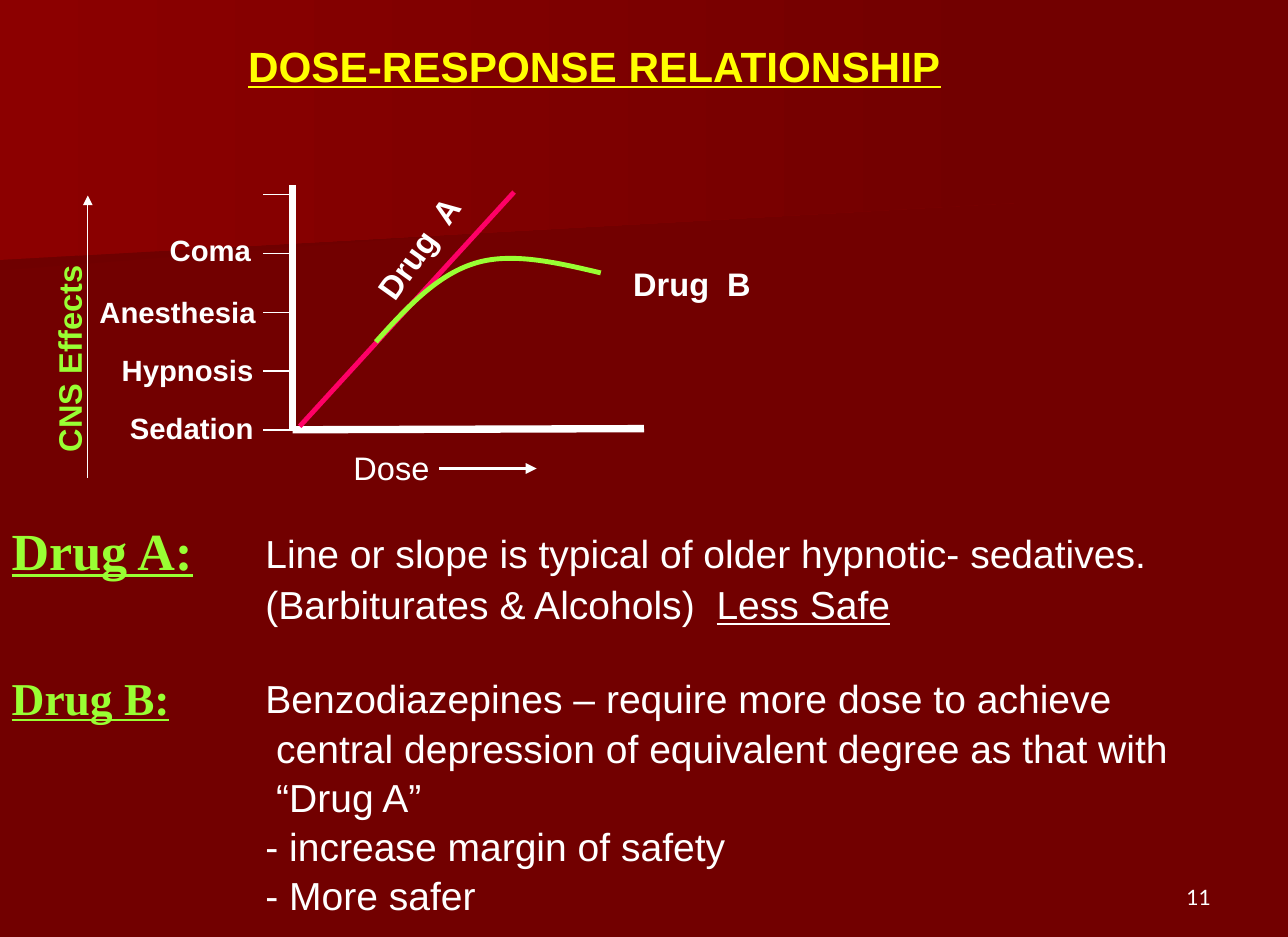
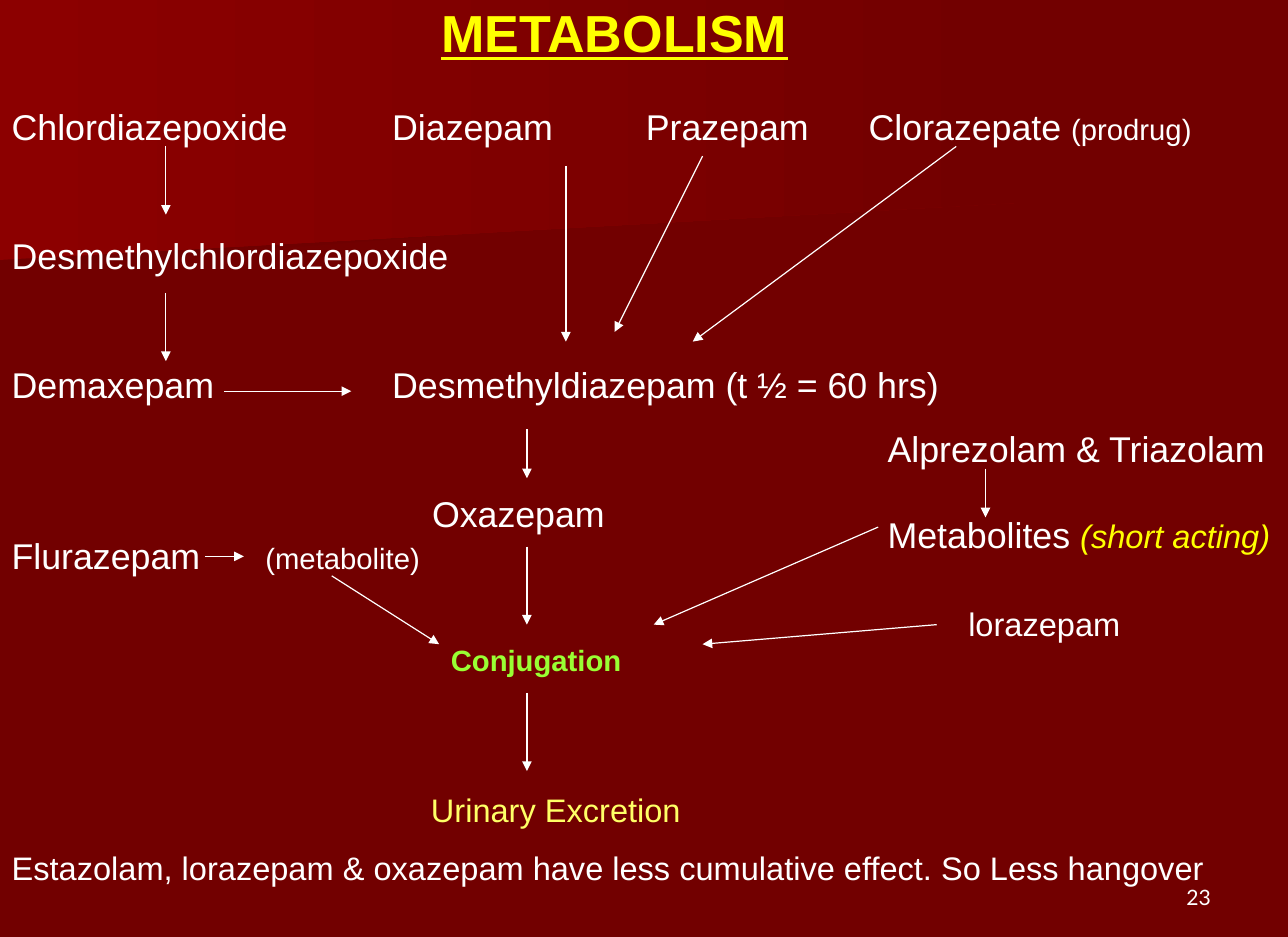
from dataclasses import dataclass

from lxml import etree
from pptx import Presentation
from pptx.dml.color import RGBColor
from pptx.enum import shapes, text
from pptx.oxml import ns
from pptx.util import Pt


@dataclass(frozen=True)
class Theme:
    # Colours
    ground: str = "720000"
    glow: str = "8C0000"
    shade: str = "6F0000"
    white: str = "FFFFFF"
    gold: str = "FFFF00"
    pale: str = "FFFF66"
    lime: str = "99FF33"
    pink: str = "FF0066"
    # Type
    sans: str = "Arial"
    serif: str = "Times New Roman"
    digit: str = "Lato"
    tiny: float = 13
    small: float = 18
    mid: float = 20
    body: float = 22
    large: float = 24
    # Lines
    thin: float = 0.75
    bold: float = 4.5


T = Theme()
RISE = {T.sans: 0.905, T.serif: 0.891, T.digit: 0.987}  # ascent per point


class Deck:
    def __init__(self):
        self.file = Presentation()
        self.file.slide_width, self.file.slide_height = Pt(792), Pt(576)

    def page(self, number):
        """Start a slide with ground, bands and number."""
        self.slide = self.file.slides.add_slide(self.file.slide_layouts[6])
        back = self.slide.background.fill
        back.solid()
        back.fore_color.rgb = RGBColor.from_string(T.ground)
        self.band([(0, 77.8), (617, 77.8), (616.3, 117.4), (0, 166.3)], T.shade)
        self.band([(0, 0), (627.1, 0), (627.1, 124.6), (0, 159.8)], T.glow)
        self.text(644.5, 556.6, 100, number, T.tiny, font=T.digit,
                  align=text.PP_ALIGN.RIGHT)

    def form(self, spots, close):
        spots = [(Pt(x), Pt(y)) for x, y in spots]
        pen = self.slide.shapes.build_freeform(*spots[0])
        pen.add_line_segments(spots[1:], close=close)
        shape = pen.convert_to_shape()
        shape.shadow.inherit = False
        return shape

    def band(self, spots, color):
        shape = self.form(spots, True)
        shape.line.fill.background()
        shape.fill.gradient()
        shape.fill.gradient_angle = 0
        for stop, tint in zip(shape.fill.gradient_stops, (color, T.ground)):
            stop.color.rgb = RGBColor.from_string(tint)

    def curve(self, spots, color, width):
        """Draw cubic curves: a start, then three points for each."""
        shape = self.form(spots, False)
        shape.fill.background()
        self.ink(shape, color, width)
        legs = shape._element.findall(".//" + ns.qn("a:lnTo"))
        for i in range(0, len(legs), 3):
            bend = etree.Element(ns.qn("a:cubicBezTo"))
            legs[i].addprevious(bend)
            for leg in legs[i:i + 3]:
                bend.append(leg[0])
                leg.getparent().remove(leg)

    def ink(self, shape, color, width):
        shape.line.color.rgb = RGBColor.from_string(color)
        shape.line.width = Pt(width)

    def line(self, x1, y1, x2, y2, color=T.white, width=T.thin, arrow=False):
        rule = self.slide.shapes.add_connector(
            shapes.MSO_CONNECTOR.STRAIGHT, Pt(x1), Pt(y1), Pt(x2), Pt(y2))
        self.ink(rule, color, width)
        props = rule._element.spPr
        if arrow:
            edge = props.find(ns.qn("a:ln"))
            etree.SubElement(edge, ns.qn("a:tailEnd"), type="triangle")
        etree.SubElement(props, ns.qn("a:effectLst"))

    def arrow(self, x1, y1, x2, y2, width=T.thin):
        self.line(x1, y1, x2, y2, width=width, arrow=True)

    def style(self, run, size, color=T.white, font=T.sans, bold=False,
              under=False, slant=False):
        face = run.font
        face.name, face.size = font, Pt(size)
        face.bold, face.underline, face.italic = bold, under, slant
        face.color.rgb = RGBColor.from_string(color)

    def text(self, x, base, width, words, size, gap=0, turn=0,
             align=text.PP_ALIGN.LEFT, font=T.sans, **look):
        """Place text by its left edge and the baseline of its first line."""
        rows = words.count("\n") + 1
        box = self.slide.shapes.add_textbox(
            Pt(x), Pt(base - RISE[font] * size), Pt(width),
            Pt(rows * (1.15 * size + gap)))
        box.rotation = turn
        frame = box.text_frame
        frame.margin_left = frame.margin_right = 0
        frame.margin_top = frame.margin_bottom = 0
        frame.word_wrap = True
        frame.text = words
        for para in frame.paragraphs:
            para.alignment = align
            para.space_after = Pt(gap)
            for run in para.runs:
                self.style(run, size, font=font, **look)
        return frame.paragraphs

    def more(self, para, words, size, **look):
        """Add a run in another style."""
        run = para.add_run()
        run.text = words
        self.style(run, size, **look)

    def title(self, x, base, words, size):
        self.text(x, base, 460, words, size, color=T.gold, bold=True, under=True)


def dose(deck):
    deck.page("11")
    deck.title(152.6, 48, "DOSE-RESPONSE RELATIONSHIP", 26)

    # Axes and ticks
    deck.line(180, 113.8, 180, 264.2, width=T.bold)
    deck.line(396, 263.5, 180, 264.2, width=T.bold)
    for i in range(5):
        y = 119.5 + 36.2 * i
        deck.line(181.4, y, 162, y)
    for x, base, name in ((104.4, 158.9, "Coma"), (61.2, 197.1, "Anesthesia"),
                          (74.9, 233.1, "Hypnosis"), (79.9, 268.4, "Sedation")):
        deck.text(x, base, 100, name, T.small, bold=True)
    deck.arrow(54, 293.8, 54, 120.2)
    deck.text(-18.2, 227.3, 120, "CNS Effects", T.mid, turn=270,
              align=text.PP_ALIGN.CENTER, color=T.lime, bold=True)
    deck.text(217.4, 293.3, 50, "Dose", T.mid)
    deck.arrow(270, 288, 330, 288, 2.25)

    # Response of each drug
    deck.line(184.3, 262.1, 316.1, 118.1, T.pink, 3)
    deck.curve([(231.1, 210.2), (249.8, 189.4), (268.6, 169.2), (291.6, 162),
                (313.9, 154.8), (342, 161.3), (369.4, 167.8)], T.lime, 3)
    deck.text(206.7, 158.7, 100, "Drug  A", T.mid, turn=305.4,
              align=text.PP_ALIGN.CENTER, bold=True)
    deck.text(389.4, 180.3, 100, "Drug  B", T.mid, bold=True)

    # Notes
    for base, name, size in ((347, "Drug A:", 32), (436.6, "Drug B:", 28)):
        deck.text(7.2, base, 150, name, size, font=T.serif, color=T.lime,
                  bold=True, under=True)
    older = deck.text(
        163.2, 347, 620,
        "Line or slope is typical of older hypnotic- sedatives.\n"
        "(Barbiturates & Alcohols)  ", T.large, gap=2.9)
    deck.more(older[1], "Less Safe", T.large, under=True)
    newer = deck.text(
        163.2, 436.6, 620,
        "Benzodiazepines – require more dose to achieve\n"
        "central depression of equivalent degree as that with\n"
        "“Drug A”\n"
        "- increase margin of safety\n"
        "- More safer", T.large, gap=1.45)
    for para in newer[1:3]:
        para._p.get_or_add_pPr().set("marL", str(Pt(6.7)))


def fate(deck):
    deck.page("23")
    deck.title(271.4, 29.4, "METABOLISM", 32)

    # Drugs on a grid of tab stops and text rows
    for tab, row, width, name in (
            (0, 0, 200, "Chlordiazepoxide"), (3, 0, 130, "Diazepam"),
            (5, 0, 120, "Prazepam"), (0, 3, 300, "Desmethylchlordiazepoxide"),
            (0, 6, 150, "Demaxepam"),
            (3, 6, 380, "Desmethyldiazepam (t ½ = 60 hrs)"),
            (0, 10, 130, "Flurazepam")):
        deck.text(7.2 + 78 * tab, 84.3 + 26.4 * row, width, name, T.body)
    deck.text(265.7, 321.9, 130, "Oxazepam", T.body)
    deck.text(163.2, 348.3, 120, "(metabolite)", T.small)
    pro = deck.text(534.2, 84.3, 240, "Clorazepate ", T.body)
    deck.more(pro[0], "(prodrug)", T.small)

    # Short acting branch
    deck.text(545.8, 282.3, 245, "Alprezolam & Triazolam", T.body)
    brief = deck.text(545.8, 335.1, 245, "Metabolites ", T.body)
    deck.more(brief[0], "(short acting)", T.mid, color=T.gold, slant=True)
    deck.text(595.4, 389.1, 120, "lorazepam", T.mid)

    # Outcome
    deck.text(277.2, 410.9, 120, "Conjugation", T.small, color=T.lime, bold=True)
    deck.text(265, 503.5, 180, "Urinary Excretion", T.mid, color=T.pale)
    deck.text(7.2, 539.5, 778, "Estazolam, lorazepam & oxazepam have less "
              "cumulative effect. So Less hangover", T.mid)

    # Pathways: straight down, then the rest
    for x, top, foot in ((102, 90, 132), (102, 180, 222), (348, 102, 210),
                         (324, 264, 294), (324, 336, 384), (324, 426, 474),
                         (606, 288, 318)):
        deck.arrow(x, top, x, foot)
    for ends in ((432, 96, 378, 204), (588, 90, 426, 210),
                 (126, 342, 150, 342), (138, 240.5, 216, 240.5),
                 (576, 384, 432, 396), (540, 324, 402, 384),
                 (204, 354, 270, 396)):
        deck.arrow(*ends)


def main():
    deck = Deck()
    dose(deck)
    fate(deck)
    deck.file.save("out.pptx")


if __name__ == "__main__":
    main()
